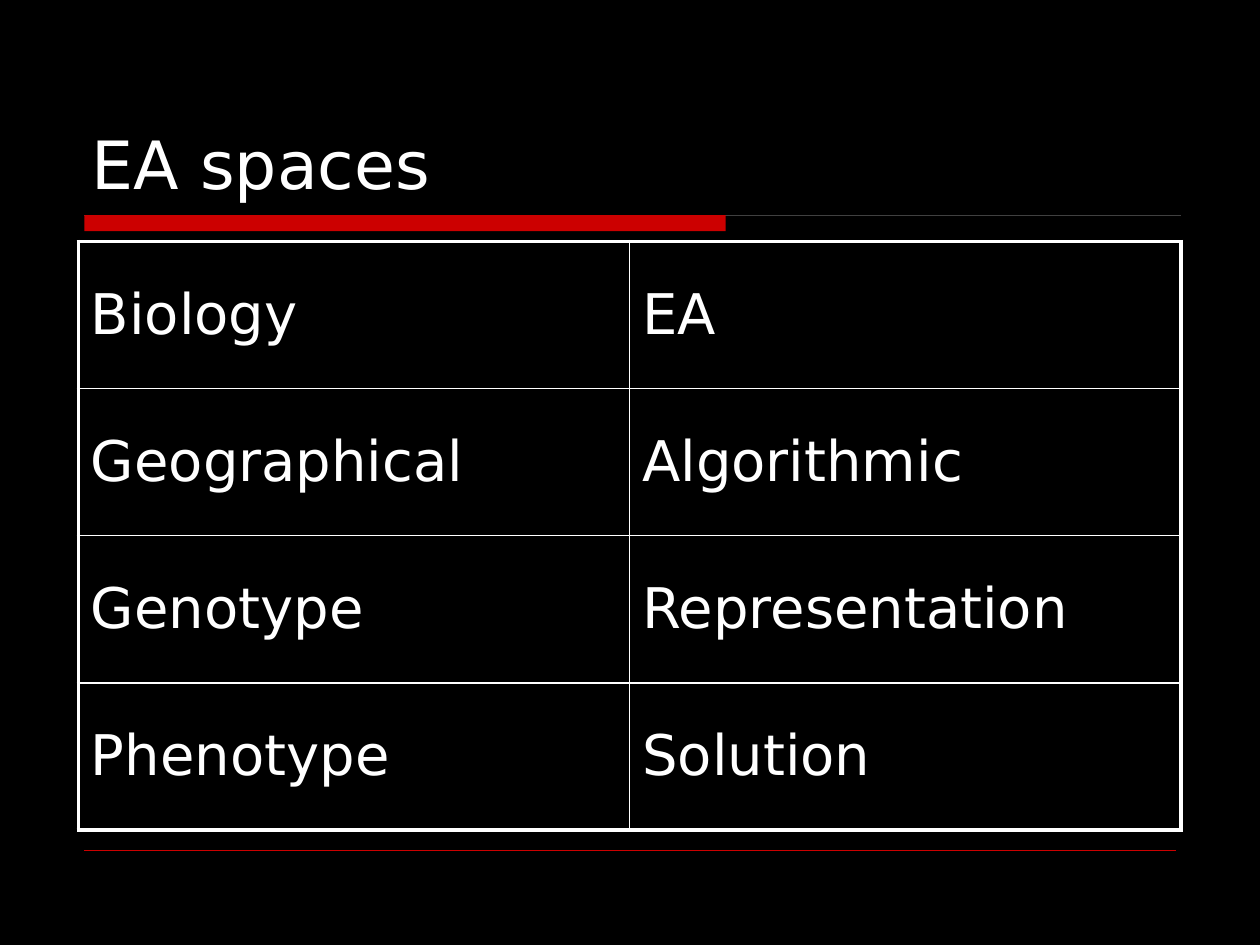
from lxml.etree import SubElement
from pptx import Presentation
from pptx.dml.color import RGBColor
from pptx.enum.shapes import MSO_CONNECTOR, MSO_SHAPE
from pptx.enum.text import MSO_ANCHOR
from pptx.oxml.ns import qn
from pptx.util import Cm, Pt

BLACK = RGBColor(0x00, 0x00, 0x00)
WHITE = RGBColor(0xFF, 0xFF, 0xFF)
RED = RGBColor(0xCC, 0x00, 0x00)
GRAY = RGBColor(0x40, 0x40, 0x40)

ROWS = [
    ("Biology", "EA"),
    ("Geographical", "Algorithmic"),
    ("Genotype", "Representation"),
    ("Phenotype", "Solution"),
]


class SlideBuilder:
    font_name = "DejaVu Sans"
    title_size = Pt(38)
    cell_size = Pt(32)
    outer_width = Pt(2.25)
    inner_width = Pt(1)

    def __init__(self, page):
        self.page = page
        fill = page.background.fill
        fill.solid()
        fill.fore_color.rgb = BLACK

    def add_span(self, para, text, size):
        span = para.add_run()
        span.text = text
        span.font.name = self.font_name
        span.font.size = size
        span.font.color.rgb = WHITE

    def title(self, text, left, top, width, height):
        box = self.page.shapes.add_textbox(left, top, width, height)
        frame = box.text_frame
        frame.word_wrap = True
        frame.vertical_anchor = MSO_ANCHOR.BOTTOM
        self.add_span(frame.paragraphs[0], text, self.title_size)

    def bar(self, left, top, width, height):
        shape = self.page.shapes.add_shape(MSO_SHAPE.RECTANGLE, left, top, width, height)
        shape.shadow.inherit = False
        shape.fill.solid()
        shape.fill.fore_color.rgb = RED
        shape.line.fill.background()

    def rule(self, left, right, top, color, weight):
        line = self.page.shapes.add_connector(MSO_CONNECTOR.STRAIGHT, left, top, right, top)
        line.line.color.rgb = color
        line.line.width = weight
        SubElement(line._element.spPr, qn("a:effectLst"))

    def border(self, cell, side, weight):
        line = SubElement(cell._tc.get_or_add_tcPr(), qn(f"a:ln{side}"), w=str(weight))
        fill = SubElement(line, qn("a:solidFill"))
        SubElement(fill, qn("a:srgbClr"), val=str(WHITE))

    def table(self, rows, left, top, width, height):
        row_count, column_count = len(rows), len(rows[0])
        table = self.page.shapes.add_table(
            row_count, column_count, left, top, width, height
        ).table
        table.first_row = False
        table.horz_banding = False
        for row, texts in enumerate(rows):
            for column, text in enumerate(texts):
                cell = table.cell(row, column)
                cell.vertical_anchor = MSO_ANCHOR.MIDDLE
                outer_sides = {
                    "L": column == 0,
                    "R": column == column_count - 1,
                    "T": row == 0,
                    "B": row == row_count - 1,
                }
                for side, is_outer in outer_sides.items():
                    self.border(cell, side, self.outer_width if is_outer else self.inner_width)
                cell.fill.solid()
                cell.fill.fore_color.rgb = BLACK
                self.add_span(cell.text_frame.paragraphs[0], text, self.cell_size)


def main():
    deck = Presentation()
    deck.slide_width = Cm(25.4)
    deck.slide_height = Cm(19.05)
    builder = SlideBuilder(deck.slides.add_slide(deck.slide_layouts[6]))
    builder.rule(Cm(1.7), Cm(23.8), Cm(4.34), GRAY, Pt(0.75))
    builder.bar(Cm(1.7), Cm(4.34), Cm(12.93), Cm(0.32))
    builder.rule(Cm(1.7), Cm(23.7), Cm(17.15), RED, Pt(0.25))
    builder.title("EA spaces", Cm(1.6), Cm(0.84), Cm(22.23), Cm(3.38))
    builder.table(ROWS, Cm(1.58), Cm(4.87), Cm(22.23), Cm(11.86))
    deck.save("out.pptx")


if __name__ == "__main__":
    main()
